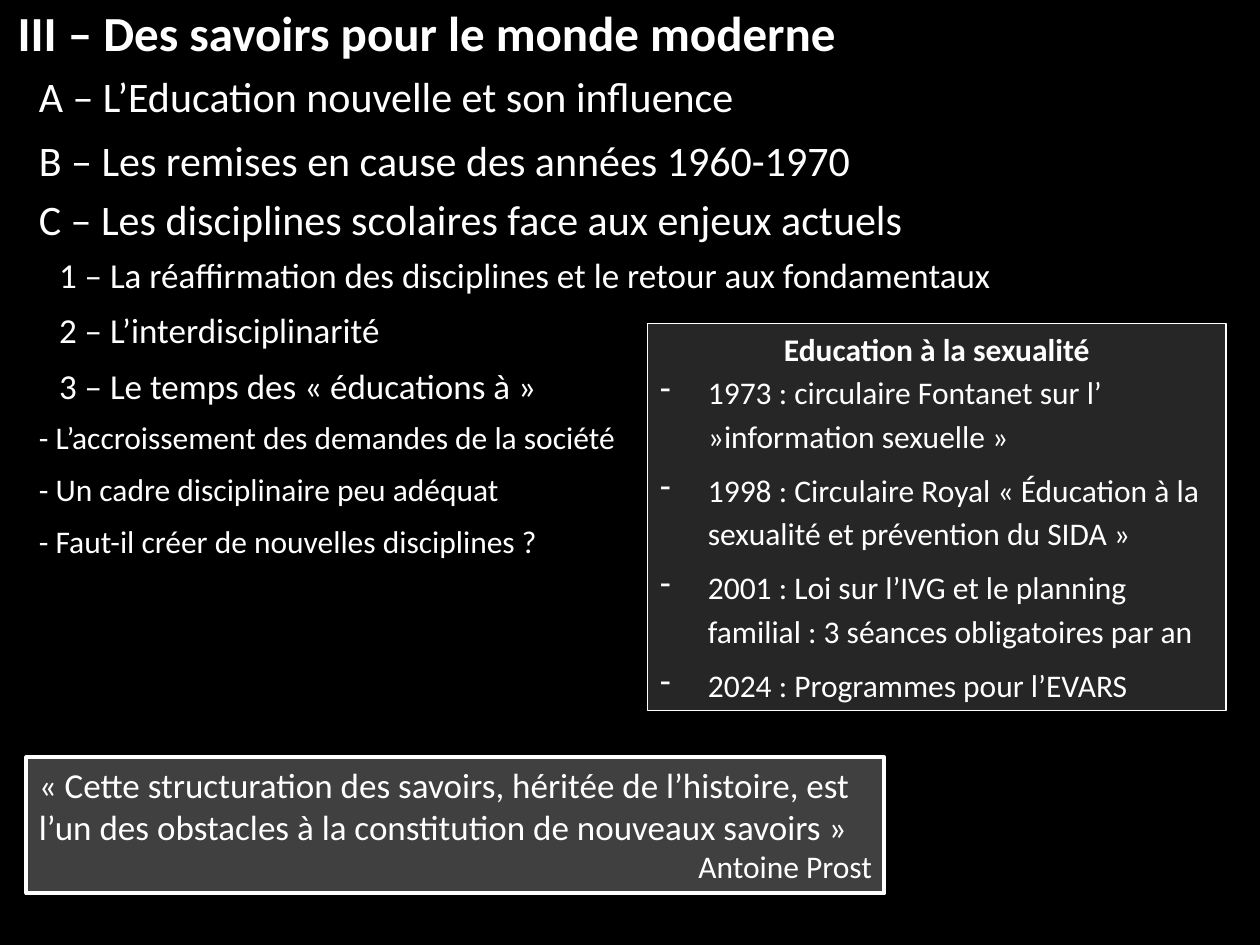
from lxml import etree
from pptx import Presentation
from pptx.dml.color import RGBColor
from pptx.enum import shapes, text
from pptx.oxml import ns
from pptx.util import Inches, Pt


def color(value):
    return RGBColor.from_string(value)


class SlideWriter:
    """Holds the style and the slide being written."""
    font = "Calibri"
    ink = "FFFFFF"

    def __init__(self, slide, background):
        self.slide = slide
        slide.background.fill.solid()
        slide.background.fill.fore_color.rgb = color(background)

    def style(self, para, size, bold=False, align=text.PP_ALIGN.LEFT):
        para.alignment = align
        for span in para.runs:
            span.font.name = self.font
            span.font.size = Pt(size)
            span.font.bold = bold
            span.font.color.rgb = color(self.ink)

    def prepare(self, frame):
        frame.word_wrap = True
        frame.auto_size = text.MSO_AUTO_SIZE.SHAPE_TO_FIT_TEXT
        frame.vertical_anchor = text.MSO_ANCHOR.TOP

    def title(self, words, left, top, width, height, size):
        box = self.slide.shapes.title
        box.left, box.top = Inches(left), Inches(top)
        box.width, box.height = Inches(width), Inches(height)
        box.text_frame.text = words
        self.prepare(box.text_frame)
        self.style(box.text_frame.paragraphs[0], size, bold=True)

    def line(self, words, left, top, width, height, size):
        box = self.slide.shapes.add_textbox(
            Inches(left), Inches(top), Inches(width), Inches(height))
        box.text_frame.text = words
        self.prepare(box.text_frame)
        self.style(box.text_frame.paragraphs[0], size)

    def panel(self, lines, left, top, width, height, fill, border):
        box = self.slide.shapes.add_shape(
            shapes.MSO_SHAPE.RECTANGLE,
            Inches(left), Inches(top), Inches(width), Inches(height))
        box.shadow.inherit = False
        box.fill.solid()
        box.fill.fore_color.rgb = color(fill)
        box.line.color.rgb = color(self.ink)
        box.line.width = Pt(border)
        box.text_frame.text = "\n".join(lines)
        self.prepare(box.text_frame)
        return box.text_frame.paragraphs

    def dash(self, para, indent=0.38, tab=0.5):
        props = para._p.get_or_add_pPr()
        props.set("marL", str(Inches(indent)))
        props.set("indent", str(-Inches(indent)))
        etree.SubElement(props, ns.qn("a:buChar"), char="-")
        tabs = etree.SubElement(props, ns.qn("a:tabLst"))
        etree.SubElement(tabs, ns.qn("a:tab"), pos=str(Inches(tab)), algn="l")
        para.line_spacing = 1.15
        para.space_after = Pt(6)


# Text of the slide
SECTIONS = [
    ("A – L’Education nouvelle et son influence", 0.51),
    ("B – Les remises en cause des années 1960-1970", 1.02),
    ("C – Les disciplines scolaires face aux enjeux actuels", 1.49),
]
SUBSECTIONS = [
    "1 – La réaffirmation des disciplines et le retour aux fondamentaux",
    "2 – L’interdisciplinarité",
    "3 – Le temps des « éducations à »",
]
POINTS = [
    ("- L’accroissement des demandes de la société", 5.03),
    ("- Un cadre disciplinaire peu adéquat", 4.88),
    ("- Faut-il créer de nouvelles disciplines ?", 4.51),
]
QUOTE = [
    "« Cette structuration des savoirs, héritée de l’histoire, est l’un des "
    "obstacles à la constitution de nouveaux savoirs »",
    "Antoine Prost",
]
EDUCATION = [
    "Education à la sexualité",
    "1973 : circulaire Fontanet sur l’ »information sexuelle »",
    "1998 : Circulaire Royal « Éducation à la sexualité et prévention du SIDA »",
    "2001 : Loi sur l’IVG et le planning familial : 3 séances obligatoires par an",
    "2024 : Programmes pour l’EVARS",
]


def main():
    deck = Presentation()
    deck.slide_width, deck.slide_height = Inches(10), Inches(7.5)
    page = SlideWriter(deck.slides.add_slide(deck.slide_layouts[5]), "000000")

    # Outline
    page.title("III – Des savoirs pour le monde moderne",
               0.04, -0.03, 8.36, 0.57, size=28)
    for words, top in SECTIONS:
        page.line(words, 0.21, top, 8.03, 0.5, size=24)
    for row, words in enumerate(SUBSECTIONS):
        page.line(words, 0.37, 1.96 + 0.44 * row, 9.11, 0.44, size=20)
    for row, (words, width) in enumerate(POINTS):
        page.line(words, 0.21, 3.27 + 0.41 * row, width, 0.4, size=18)

    # Quotation
    quote, author = page.panel(QUOTE, 0.21, 6.01, 6.81, 1.08, "404040", 2.25)
    page.style(quote, 20)
    page.style(author, 18, align=text.PP_ALIGN.RIGHT)

    # Dated example
    heading, *dates = page.panel(EDUCATION, 5.14, 2.57, 4.59, 3.07, "262626", 0.75)
    page.style(heading, 18, bold=True, align=text.PP_ALIGN.CENTER)
    for para in dates:
        page.dash(para)
        page.style(para, 18)

    deck.save("out.pptx")


if __name__ == "__main__":
    main()
